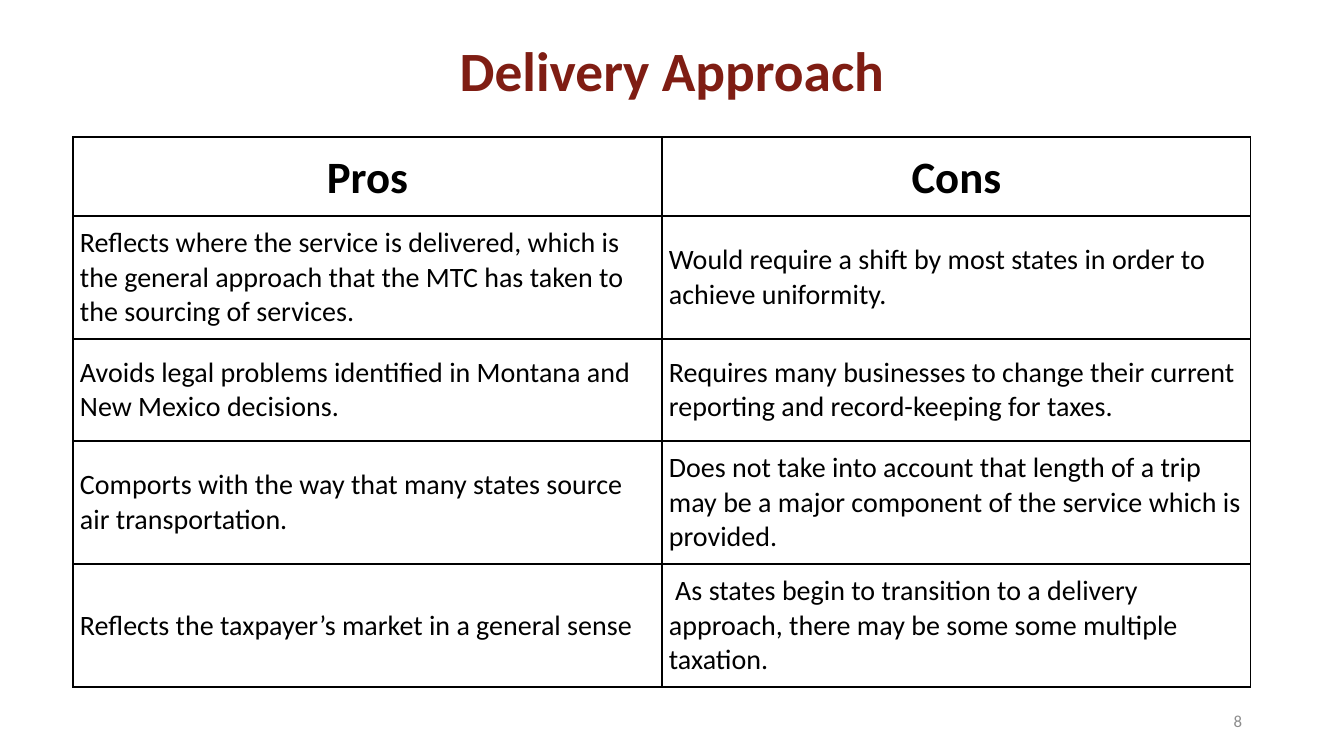
from lxml import etree
from pptx import Presentation
from pptx.dml.color import RGBColor
from pptx.enum.text import MSO_ANCHOR, PP_ALIGN
from pptx.oxml.ns import qn
from pptx.util import Pt

LEFT, MID, RIGHT = PP_ALIGN.LEFT, PP_ALIGN.CENTER, PP_ALIGN.RIGHT
MIDDLE = MSO_ANCHOR.MIDDLE
MAROON = RGBColor(0x7F, 0x1D, 0x13)
BLACK = RGBColor(0, 0, 0)
GREY = RGBColor(0x8C, 0x8C, 0x8C)


def px(n):
    return round(n * 914400 / 100.8)


def write(frame, text, size=20, color=BLACK, bold=False, align=LEFT, spacing=1.0):
    frame.word_wrap = True
    para = frame.paragraphs[0]
    para.alignment = align
    para.line_spacing = spacing
    run = para.add_run()
    run.text = text
    font = run.font
    font.name = "Calibri"
    font.size = Pt(size)
    font.bold = bold
    font.color.rgb = color


deck = Presentation()
deck.slide_width, deck.slide_height = px(1344), px(756)
slide = deck.slides.add_slide(deck.slide_layouts[6])
shapes = slide.shapes

labels = [
    ((0, 40, 1344, 67), "Delivery Approach",
     dict(size=39.6, color=MAROON, bold=True, align=MID, spacing=0.9)),
    ((950, 701, 302, 40), "8", dict(size=12, color=GREY, align=RIGHT)),
]
for place, text, style in labels:
    frame = shapes.add_textbox(*map(px, place)).text_frame
    frame.vertical_anchor = MIDDLE
    write(frame, text, **style)

rows = [
    (79, "Pros", "Cons"),
    (123, "Reflects where the service is delivered, which is the general approach that the MTC has taken to the sourcing of services.",
     "Would require a shift by most states in order to achieve uniformity."),
    (102, "Avoids legal problems identified in Montana and New Mexico decisions.",
     "Requires many businesses to change their current reporting and record-keeping for taxes."),
    (123, "Comports with the way that many states source air transportation.",
     "Does not take into account that length of a trip may be a major component of the service which is provided."),
    (123, "Reflects the taxpayer’s market in a general sense",
     " As states begin to transition to a delivery approach, there may be some some multiple taxation."),
]
total = sum(row[0] for row in rows)
table = shapes.add_table(len(rows), 2, px(73), px(137), px(1178), px(total)).table
table.first_row = False
table.horz_banding = False
for col in table.columns:
    col.width = px(589)

head = dict(size=32, bold=True, align=MID, spacing=1.07)
for r, (height, *texts) in enumerate(rows):
    table.rows[r].height = px(height)
    for c, text in enumerate(texts):
        cell = table.cell(r, c)
        cell.margin_left = cell.margin_right = px(7)
        cell.margin_top = cell.margin_bottom = px(10)
        cell.vertical_anchor = MIDDLE
        props = cell._tc.get_or_add_tcPr()
        for side in ("lnL", "lnR", "lnT", "lnB"):
            line = etree.SubElement(props, qn("a:" + side), w=str(Pt(1)))
            fill = etree.SubElement(line, qn("a:solidFill"))
            etree.SubElement(fill, qn("a:srgbClr"), val=str(BLACK))
        cell.fill.background()
        write(cell.text_frame, text, **(head if r == 0 else {}))

deck.save("out.pptx")
